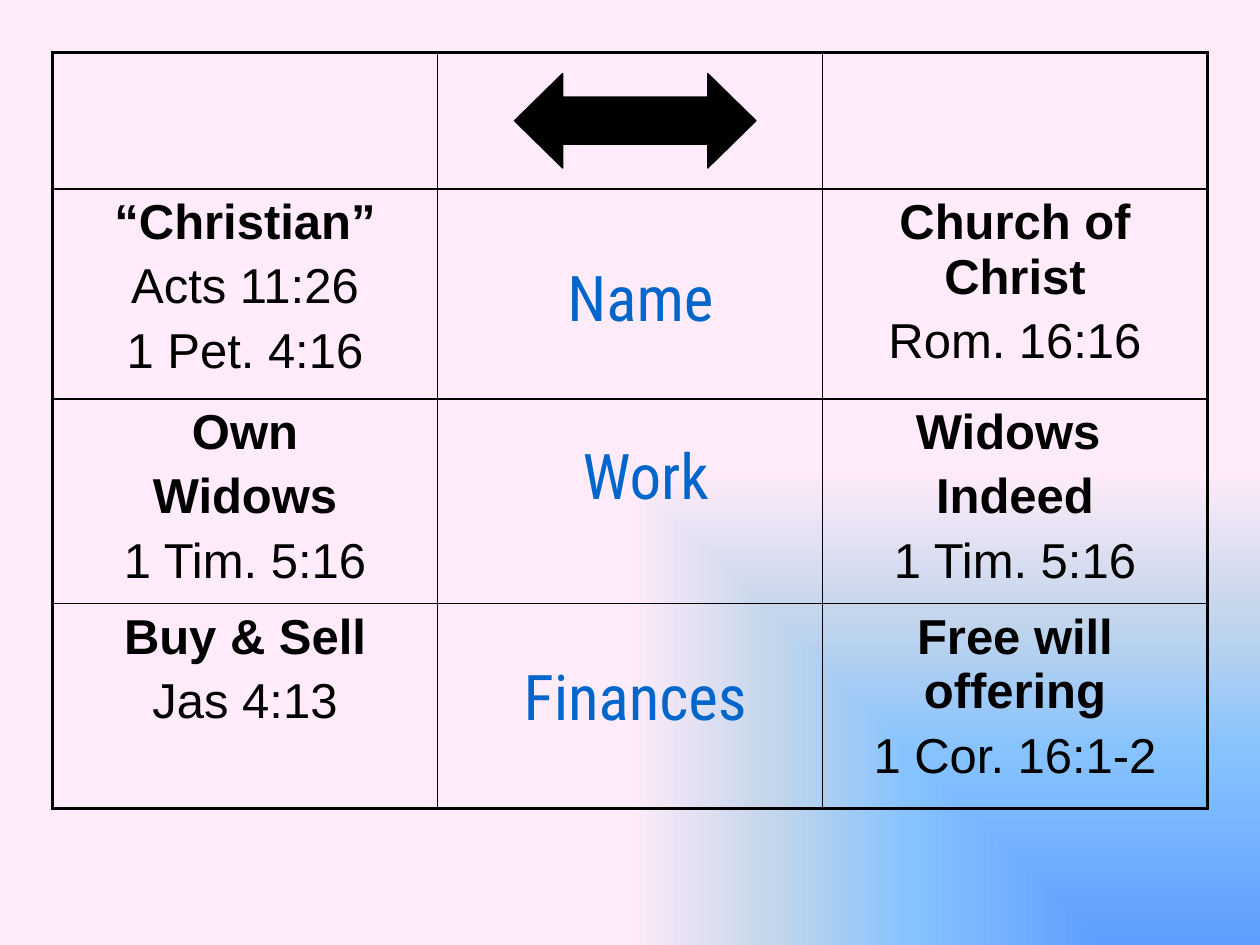
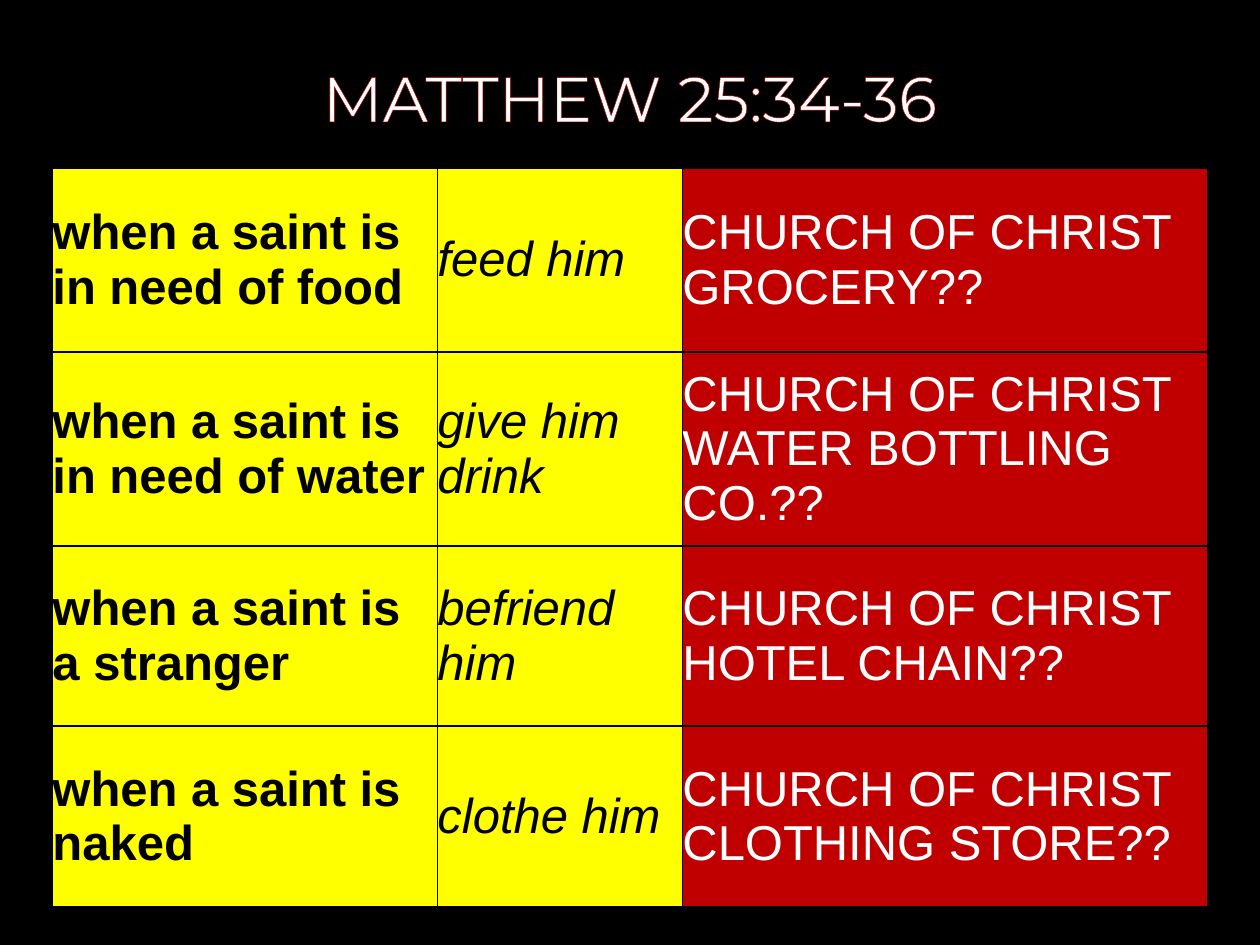
from lxml import etree
from pptx import Presentation, util as u
from pptx.dml import color
from pptx.enum import shapes, text
from pptx.oxml import ns

Pt = u.Pt
BLACK, WHITE, YELLOW, RED = "000000", "FFFFFF", "FFFF00", "C00000"
BLUE, PALE_BLUE = "0066CC", "99CCFF"
BODY_FONT, LABEL_FONT, TITLE_FONT = "Arial", "Roboto Condensed", "Montserrat"
BODY_SIZE, HEADING_SIZE = 28, 36
TABLE_LEFT = 30
THIN, THICK = 1, 2.25
GRADIENT = [(0, "5E9EFF"), (40, "85C2FF"), (70, "C4D6EB"), (100, "FFEBFA")]

# Slide 1: each cell holds bold lines, then plain lines
COMPARISON = [
    (([], []), ([], []), ([], [])),
    ((["“Christian”"], ["Acts 11:26", "1 Pet. 4:16"]), ([], []),
     (["Church of Christ"], ["Rom. 16:16"])),
    ((["Own", "Widows"], ["1 Tim. 5:16"]), ([], []),
     (["Widows ", "Indeed"], ["1 Tim. 5:16"])),
    ((["Buy & Sell"], ["Jas 4:13"]), ([], []),
     (["Free will offering"], ["1 Cor. 16:1-2"])),
]
COMPARISON_COLUMNS = [220, 220, 220]
COMPARISON_ROWS = [78, 120, 117, 117]
LABELS = [  # wording, left, top, width
    ("Name", 306, 144, 120),
    ("Work", 312, 246, 114),
    ("Finances", 270, 372, 186),
]
LABEL_HEIGHT = 60

# Slide 2: need, response, institution
TITLE = "MATTHEW 25:34-36"
NEEDS = [
    ("when a saint is in need of food", "feed him", "CHURCH OF CHRIST GROCERY??"),
    ("when a saint is in need of water", "give him drink",
     "CHURCH OF CHRIST WATER BOTTLING CO.??"),
    ("when a saint is a stranger", "befriend him", "CHURCH OF CHRIST HOTEL CHAIN??"),
    ("when a saint is naked", "clothe him", "CHURCH OF CHRIST CLOTHING STORE??"),
]
NEED_STYLES = [  # fill, font colour, bold, italic
    (YELLOW, BLACK, True, False),
    (YELLOW, BLACK, False, True),
    (RED, WHITE, False, False),
]
NEED_COLUMNS = [220, 140, 300]
NEED_ROWS = [105, 111, 103, 103]


def rgb(value):
    return color.RGBColor.from_string(value)


def add_element(parent, tag, **attributes):
    return etree.SubElement(parent, ns.qn(tag), {k: str(v) for k, v in attributes.items()})


def add_line(parent, tag, value, width):
    line = add_element(parent, tag, w=int(Pt(width)))
    add_element(add_element(line, "a:solidFill"), "a:srgbClr", val=value)
    return line


def add_run(paragraph, wording, font, size, value, bold=False, italic=False):
    run = paragraph.add_run()
    run.text = wording
    run.font.name, run.font.size = font, Pt(size)
    run.font.bold, run.font.italic = bold, italic
    run.font.color.rgb = rgb(value)
    return run


def write_heading(shape, wording, font, value, outline, outline_width):
    """One centred, outlined line that does not wrap."""
    frame = shape.text_frame
    frame.word_wrap = False
    frame.auto_size = text.MSO_AUTO_SIZE.NONE
    frame.vertical_anchor = text.MSO_ANCHOR.TOP
    paragraph = frame.paragraphs[0]
    paragraph.alignment = text.PP_ALIGN.CENTER
    run = add_run(paragraph, wording, font, HEADING_SIZE, value)
    properties = run.font._element if hasattr(run.font, "_element") else run._r.get_or_add_rPr()
    properties.insert(0, add_line(properties, "a:ln", outline, outline_width))


def add_table(slide, top, columns, rows, outer_width):
    """A plain table with thin inner lines and an outer frame."""
    table = slide.shapes.add_table(len(rows), len(columns), Pt(TABLE_LEFT), Pt(top),
                                   Pt(sum(columns)), Pt(sum(rows))).table
    table.first_row = table.horz_banding = False
    for column, width in zip(table.columns, columns):
        column.width = Pt(width)
    for row, height in zip(table.rows, rows):
        row.height = Pt(height)
    for r in range(len(rows)):
        for c in range(len(columns)):
            cell = table.cell(r, c)
            edges = {"a:lnL": c == 0, "a:lnR": c == len(columns) - 1,
                     "a:lnT": r == 0, "a:lnB": r == len(rows) - 1}
            for tag, is_outer in edges.items():
                add_line(cell._tc.get_or_add_tcPr(), tag, BLACK,
                         outer_width if is_outer else THIN)
            cell.fill.background()
    return table


def set_gradient_background(slide):
    """Rectangular gradient that grows from the bottom right corner."""
    slide.background.fill.gradient()
    gradient = slide.background._cSld.find(".//" + ns.qn("a:gradFill"))
    for child in list(gradient):
        gradient.remove(child)
    stops = add_element(gradient, "a:gsLst")
    for position, value in GRADIENT:
        stop = add_element(stops, "a:gs", pos=position * 1000)
        add_element(stop, "a:srgbClr", val=value)
    shade = add_element(gradient, "a:path", path="rect")
    add_element(shade, "a:fillToRect", l=100000, t=100000)
    add_element(gradient, "a:tileRect", r=-100000, b=-100000)


def build_comparison(presentation):
    slide = presentation.slides.add_slide(presentation.slide_layouts[6])
    set_gradient_background(slide)

    # Table of the individual and the church
    table = add_table(slide, 30, COMPARISON_COLUMNS, COMPARISON_ROWS, THICK)
    for r, row in enumerate(COMPARISON):
        for c, (bold_lines, plain_lines) in enumerate(row):
            frame = table.cell(r, c).text_frame
            for index, wording in enumerate(bold_lines + plain_lines):
                paragraph = frame.add_paragraph() if index else frame.paragraphs[0]
                paragraph.alignment = text.PP_ALIGN.CENTER
                if index:
                    paragraph.space_before = Pt(0.2 * BODY_SIZE)
                add_run(paragraph, wording, BODY_FONT, BODY_SIZE, BLACK,
                        bold=index < len(bold_lines))

    # Double arrow in the heading row
    arrow = slide.shapes.add_shape(shapes.MSO_SHAPE.LEFT_RIGHT_ARROW,
                                   Pt(294), Pt(42), Pt(138), Pt(54))
    arrow.adjustments[1] = 0.51
    arrow.shadow.inherit = False
    arrow.fill.solid()
    arrow.fill.fore_color.rgb = arrow.line.color.rgb = rgb(BLACK)
    arrow.line.width = Pt(0.75)

    # Topic labels in the middle column
    for wording, left, top, width in LABELS:
        label = slide.shapes.add_textbox(Pt(left), Pt(top), Pt(width), Pt(LABEL_HEIGHT))
        write_heading(label, wording, LABEL_FONT, BLUE, PALE_BLUE, 1.5)


def build_needs(presentation):
    slide = presentation.slides.add_slide(presentation.slide_layouts[5])
    slide.background.fill.solid()
    slide.background.fill.fore_color.rgb = rgb(BLACK)

    # Title
    title = slide.shapes.title
    title.left, title.top, title.width, title.height = Pt(48), Pt(30), Pt(624), Pt(51)
    write_heading(title, TITLE, TITLE_FONT, WHITE, RED, 2.25)

    # Table of needs and answers
    table = add_table(slide, 96, NEED_COLUMNS, NEED_ROWS, THIN)
    for r, row in enumerate(NEEDS):
        for c, (wording, style) in enumerate(zip(row, NEED_STYLES)):
            fill, value, bold, italic = style
            cell = table.cell(r, c)
            cell.fill.solid()
            cell.fill.fore_color.rgb = rgb(fill)
            cell.vertical_anchor = text.MSO_ANCHOR.MIDDLE
            cell.margin_left = cell.margin_right = cell.margin_top = cell.margin_bottom = 0
            add_run(cell.text_frame.paragraphs[0], wording, BODY_FONT, BODY_SIZE,
                    value, bold, italic)


def main():
    presentation = Presentation()
    presentation.slide_width, presentation.slide_height = Pt(720), Pt(540)
    build_comparison(presentation)
    build_needs(presentation)
    presentation.save("out.pptx")


if __name__ == "__main__":
    main()
